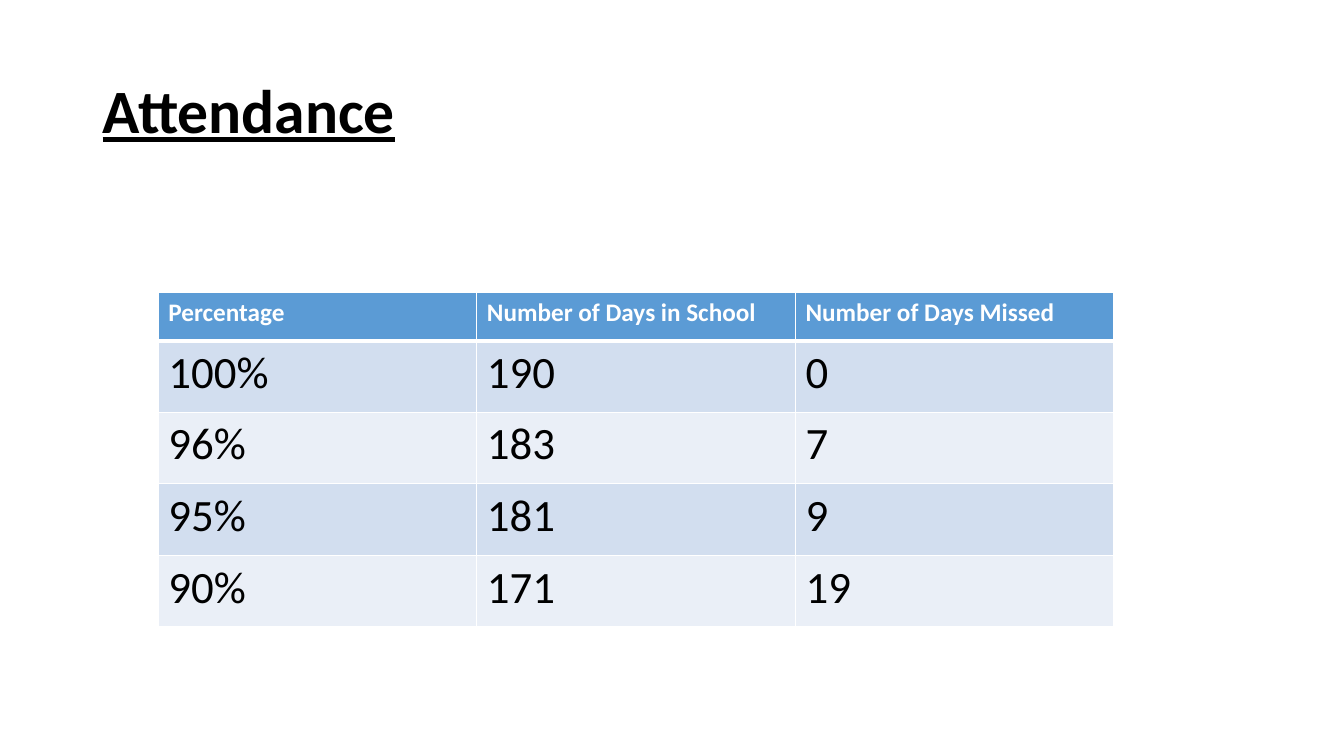
from lxml import etree
from pptx import Presentation
from pptx import util as u
from pptx.dml.color import RGBColor
from pptx.enum import text
from pptx.oxml.ns import qn

BLACK = RGBColor(0x00, 0x00, 0x00)
WHITE = RGBColor(0xFF, 0xFF, 0xFF)
HEADER_BLUE = RGBColor(0x5B, 0x9B, 0xD5)
BAND_DARK = RGBColor(0xD2, 0xDE, 0xEF)
BAND_LIGHT = RGBColor(0xEA, 0xEF, 0xF7)
FONT = "Calibri"

ATTENDANCE = [
    ("Percentage", "Number of Days in School", "Number of Days Missed"),
    ("100%", "190", "0"),
    ("96%", "183", "7"),
    ("95%", "181", "9"),
    ("90%", "171", "19"),
]
HEADER_HEIGHT = 0.48


def add_span(para, words, size, color, bold=False, underline=False):
    span = para.add_run()
    span.text = words
    span.font.name = FONT
    span.font.size = u.Pt(size)
    span.font.color.rgb = color
    span.font.bold = bold
    span.font.underline = underline


def add_title(page, left, top, width, height):
    box = page.shapes.add_textbox(*map(u.Inches, (left, top, width, height)))
    frame = box.text_frame
    frame.word_wrap = True
    frame.vertical_anchor = text.MSO_ANCHOR.MIDDLE
    para = frame.paragraphs[0]
    para.line_spacing = 0.9
    add_span(para, "Attendance", 44, BLACK, bold=True, underline=True)


def add_border(cell, side, points):
    properties = cell._tc.get_or_add_tcPr()
    line = etree.SubElement(properties, qn(f"a:ln{side}"), w=str(u.Pt(points)))
    fill = etree.SubElement(line, qn("a:solidFill"))
    etree.SubElement(fill, qn("a:srgbClr"), val=str(WHITE))


def add_attendance_table(page, left, top, width, height):
    row_count, column_count = len(ATTENDANCE), len(ATTENDANCE[0])
    table = page.shapes.add_table(
        row_count, column_count, *map(u.Inches, (left, top, width, height))
    ).table
    for column in table.columns:
        column.width = u.Inches(width / column_count)
    body_height = (height - HEADER_HEIGHT) / (row_count - 1)
    for r, values in enumerate(ATTENDANCE):
        header = r == 0
        table.rows[r].height = u.Inches(HEADER_HEIGHT if header else body_height)
        band = HEADER_BLUE if header else (BAND_LIGHT, BAND_DARK)[r % 2]
        for c, value in enumerate(values):
            cell = table.cell(r, c)
            for side in "LRTB":
                thick = (header and side == "B") or (r == 1 and side == "T")
                add_border(cell, side, 3 if thick else 1)
            cell.fill.solid()
            cell.fill.fore_color.rgb = band
            add_span(
                cell.text_frame.paragraphs[0],
                value,
                18 if header else 32,
                WHITE if header else BLACK,
                bold=header,
            )


def main():
    deck = Presentation()
    deck.slide_width = u.Inches(13.33)
    deck.slide_height = u.Inches(7.5)
    page = deck.slides.add_slide(deck.slide_layouts[6])
    add_title(page, 0.92, 0.4, 11.5, 1.45)
    add_attendance_table(page, 1.57, 2.9, 9.48, 3.32)
    deck.save("out.pptx")


if __name__ == "__main__":
    main()
